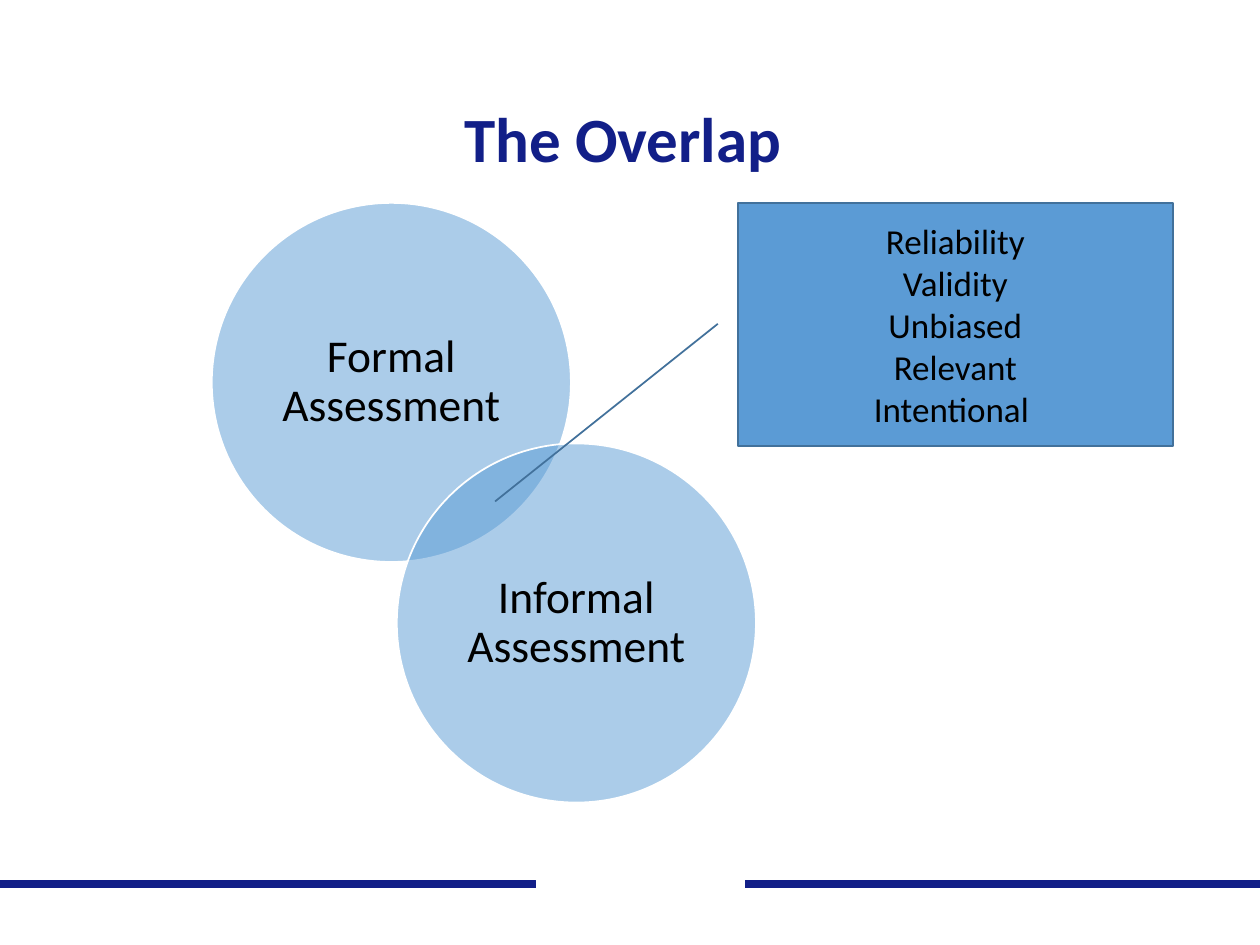
from collections import namedtuple
from dataclasses import dataclass

from lxml.etree import SubElement
from pptx import Presentation
from pptx.dml.color import RGBColor
from pptx.enum.shapes import MSO_CONNECTOR, MSO_SHAPE
from pptx.enum.text import MSO_ANCHOR, PP_ALIGN
from pptx.oxml.ns import qn
from pptx.util import Cm, Pt

Box = namedtuple("Box", "left top width height")


@dataclass(frozen=True)
class Theme:
    font: str = "Calibri"
    navy: RGBColor = RGBColor(0x12, 0x1F, 0x88)
    white: RGBColor = RGBColor(0xFF, 0xFF, 0xFF)
    black: RGBColor = RGBColor(0, 0, 0)
    circle: RGBColor = RGBColor(0x59, 0x9B, 0xD5)
    callout: RGBColor = RGBColor(0x5B, 0x9B, 0xD5)
    outline: RGBColor = RGBColor(0x42, 0x71, 0x9B)
    circle_alpha: int = 50000
    title_size: Pt = Pt(36)
    circle_size: Pt = Pt(26)
    callout_size: Pt = Pt(20)
    thin: Pt = Pt(1)
    thick: Pt = Pt(4.5)


THEME = Theme()


def write(shape, text, size, color, inset_x, inset_y, bold=False, spacing=None):
    frame = shape.text_frame
    frame.text = text
    frame.word_wrap = True
    frame.vertical_anchor = MSO_ANCHOR.MIDDLE
    frame.margin_left = frame.margin_right = inset_x
    frame.margin_top = frame.margin_bottom = inset_y
    for paragraph in frame.paragraphs:
        paragraph.alignment = PP_ALIGN.CENTER
        paragraph.line_spacing = spacing
        for run in paragraph.runs:
            run.font.name = THEME.font
            run.font.size = size
            run.font.bold = bold
            run.font.color.rgb = color


def paint(shape, fill, line):
    shape.shadow.inherit = False
    shape.fill.solid()
    shape.fill.fore_color.rgb = fill
    shape.line.color.rgb = line
    shape.line.width = THEME.thin


def place_title(slide, box, text):
    title = slide.shapes.title
    title.left, title.top, title.width, title.height = box
    write(title, text, THEME.title_size, THEME.navy, Cm(0.25), Cm(0.13),
          bold=True, spacing=0.9)


def add_footer_rule(slide, box, gap_start, gap_end):
    spans = ((0, box.width, THEME.navy), (gap_start, gap_end, THEME.white))
    for start, end, color in spans:
        rule = slide.shapes.add_connector(
            MSO_CONNECTOR.STRAIGHT,
            box.left + start, box.top, box.left + end, box.top)
        rule.line.color.rgb = color
        rule.line.width = THEME.thick
        SubElement(rule._element.spPr, qn("a:effectLst"))


def add_venn(slide, box, diameter, labels):
    steps = len(labels) - 1
    for index, label in enumerate(labels):
        circle = slide.shapes.add_shape(
            MSO_SHAPE.OVAL,
            box.left + (box.width - diameter) * index // steps,
            box.top + (box.height - diameter) * index // steps,
            diameter, diameter)
        paint(circle, THEME.circle, THEME.white)
        fill_color = circle._element.spPr.find(qn("a:solidFill"))[0]
        SubElement(fill_color, qn("a:alpha"), val=str(THEME.circle_alpha))
        write(circle, label, THEME.circle_size, THEME.black, Cm(0.28), Cm(0.28),
              spacing=0.9)


def add_shared_callout(slide, box, qualities, leader):
    callout = slide.shapes.add_shape(MSO_SHAPE.LINE_CALLOUT_1, *box)
    for index, (x, y) in enumerate(leader):
        callout.adjustments[2 * index] = y / box.height
        callout.adjustments[2 * index + 1] = x / box.width
    paint(callout, THEME.callout, THEME.outline)
    write(callout, "\n".join(qualities), THEME.callout_size, THEME.black,
          Cm(0.25), Cm(0.13))


def main():
    deck = Presentation()
    deck.slide_width, deck.slide_height = Cm(25.4), Cm(19.05)
    slide = deck.slides.add_slide(deck.slide_layouts[5])

    add_footer_rule(slide, Box(0, Cm(17.83), deck.slide_width, 0),
                    Cm(10.8), Cm(15.01))
    place_title(slide, Box(Cm(1.75), Cm(1.02), Cm(21.9), Cm(3.68)), "The Overlap ")
    add_venn(slide, Box(Cm(4.27), Cm(4.09), Cm(10.97), Cm(12.09)), Cm(7.24),
             ["Formal Assessment", "Informal Assessment"])
    add_shared_callout(
        slide, Box(Cm(14.88), Cm(4.09), Cm(8.76), Cm(4.9)),
        ["Reliability", "Validity", "Unbiased", "Relevant", "Intentional "],
        [(Cm(-0.41), Cm(2.44)), (Cm(-4.9), Cm(6.02))])

    deck.save("out.pptx")


if __name__ == "__main__":
    main()
